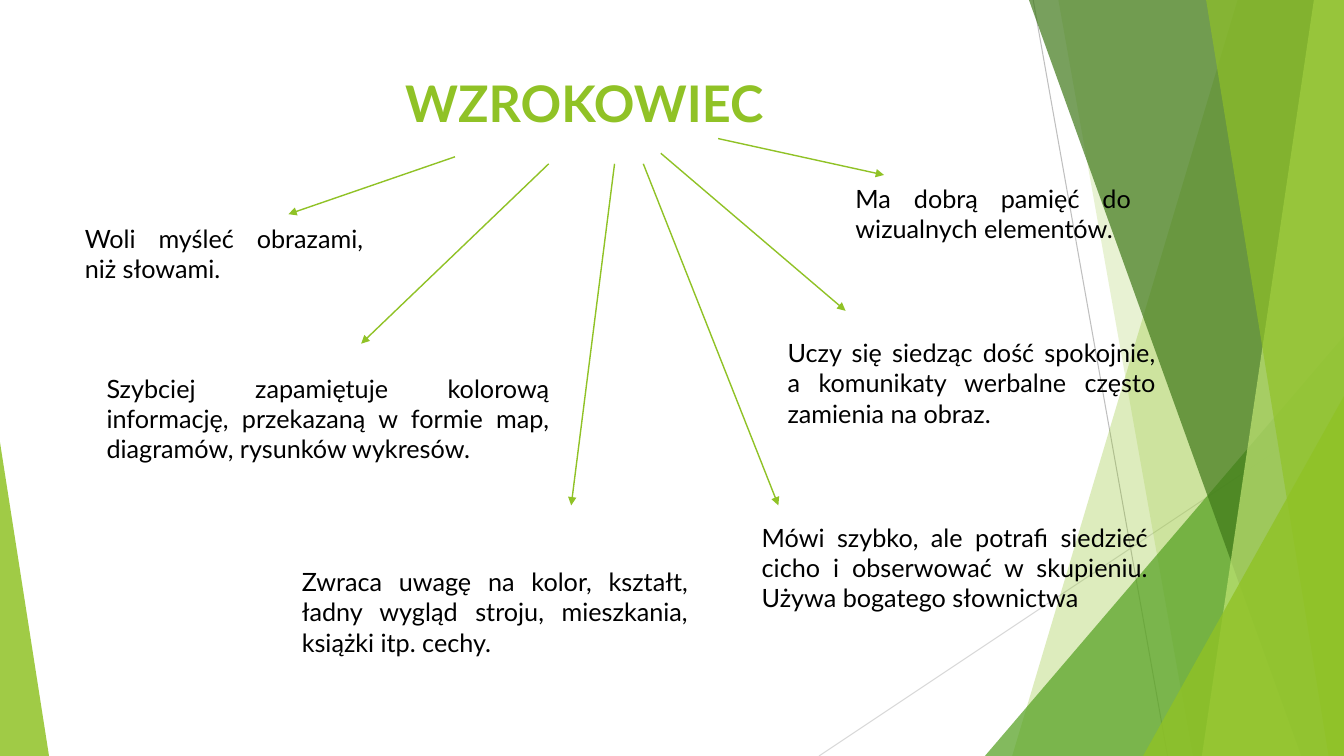
from lxml.etree import SubElement
from pptx import Presentation
from pptx.dml.color import RGBColor
from pptx.enum.shapes import MSO_CONNECTOR, MSO_SHAPE
from pptx.enum.text import MSO_ANCHOR, MSO_AUTO_SIZE, PP_ALIGN
from pptx.oxml.ns import qn
from pptx.util import Pt

GREEN = RGBColor(0x90, 0xC2, 0x26)
MID_GREEN = RGBColor(0x54, 0xA0, 0x21)
DARK_GREEN = RGBColor(0x3F, 0x78, 0x19)
PALE_GREEN = RGBColor(0xC0, 0xE4, 0x74)
GREY = RGBColor(0xBF, 0xBF, 0xBF)
LIGHT_GREY = RGBColor(0xD9, 0xD9, 0xD9)
BLACK = RGBColor(0, 0, 0)
FONT = "Lato"
WIDTH, HEIGHT = 960, 540

FACETS = [
    ("band", 76, 237, GREEN, 30),
    ("band", 204, 108, GREEN, 20),
    ("wedge", 256.5, 300, MID_GREEN, 72),
    ("band", 225, 30.5, DARK_GREEN, 70),
    ("band", 21.5, 101.5, PALE_GREEN, 70),
    ("band", 98.5, 11, GREEN, 65),
    ("wedge", 143.5, 257, GREEN, 80),
]

IDEAS = [
    ("Woli myśleć obrazami, niż słowami.",
     (53.5, 156, 213, 51), (325, 112), (206, 153)),
    ("Szybciej zapamiętuje kolorową informację, przekazaną w formie map, "
     "diagramów, rysunków wykresów.",
     (69, 263, 330.5, 73), (392, 117), (258, 245.5)),
    ("Zwraca uwagę na kolor, kształt, ładny wygląd stroju, mieszkania, "
     "książki itp. cechy.",
     (208.5, 401, 290, 73), (439, 117), (408, 361)),
    ("Mówi szybko, ale potrafi siedzieć cicho i obserwować w skupieniu. "
     "Używa bogatego słownictwa",
     (537, 369.5, 290, 73), (459.5, 117), (556, 361)),
    ("Uczy się siedząc dość spokojnie, a komunikaty werbalne często "
     "zamienia na obraz.",
     (555.5, 237.5, 277, 73), (472, 109.5), (604, 222)),
    ("Ma dobrą pamięć do wizualnych elementów.",
     (604, 127.5, 211, 51), (513, 99), (631.5, 125)),
]


def add_line(slide, start, end, color, weight):
    """Draw a straight line without a shadow and return it."""
    line = slide.shapes.add_connector(
        MSO_CONNECTOR.STRAIGHT, *map(Pt, start + end))
    line.line.color.rgb = color
    line.line.width = Pt(weight)
    SubElement(line._element.spPr, qn("a:effectLst"))
    return line


def paint(shape, color, opacity):
    """Give a shape a translucent fill and no outline or shadow."""
    shape.shadow.inherit = False
    shape.line.fill.background()
    shape.fill.solid()
    shape.fill.fore_color.rgb = color
    color_element = shape._element.spPr.find(".//" + qn("a:srgbClr"))
    SubElement(color_element, qn("a:alpha"), val=str(opacity * 1000))


def add_wedge(slide, box, apex, color, opacity):
    """Fill a box with a triangle whose apex is at the given fraction."""
    wedge = slide.shapes.add_shape(MSO_SHAPE.ISOSCELES_TRIANGLE, *map(Pt, box))
    wedge.adjustments[0] = apex
    paint(wedge, color, opacity)


def add_band(slide, box, top_inset, bottom_inset, color, opacity):
    """Fill the right edge of a box from a slanted left side."""
    left, top, width, height = box
    right, bottom = left + width, top + height
    builder = slide.shapes.build_freeform(
        Pt(right - top_inset), Pt(top), scale=1.0)
    corners = [(right, top), (right, bottom), (right - bottom_inset, bottom)]
    builder.add_line_segments([(Pt(x), Pt(y)) for x, y in corners], close=True)
    paint(builder.convert_to_shape(), color, opacity)


def add_backdrop(slide, box):
    """Place the thin lines and green facets along the sides of a box."""
    left, top, width, height = box
    right, bottom = left + width, top + height
    add_line(slide, (right - 222, top), (right - 126, bottom), GREY, 0.75)
    add_line(slide, (right, bottom - 250), (right - 375, bottom),
             LIGHT_GREY, 0.75)
    for kind, first, second, color, opacity in FACETS:
        if kind == "band":
            add_band(slide, box, first, second, color, opacity)
        else:
            wedge_box = (right - first, bottom - second, first, second)
            add_wedge(slide, wedge_box, 1, color, opacity)
    add_wedge(slide, (left, bottom - 224, 35, 224), 0, GREEN, 85)


def add_title(slide, box, text):
    """Set the title in its box, centred a little to the right."""
    title = slide.shapes.title
    title.left, title.top, title.width, title.height = map(Pt, box)
    frame = title.text_frame
    frame.text = text
    frame.auto_size = MSO_AUTO_SIZE.NONE
    frame.vertical_anchor = MSO_ANCHOR.TOP
    frame.margin_left = Pt(59)
    format_paragraph(frame.paragraphs[0], 36, GREEN, PP_ALIGN.CENTER, True)


def format_paragraph(paragraph, size, color, alignment, bold=False):
    """Set the font and alignment of a paragraph."""
    paragraph.alignment = alignment
    paragraph.font.name = FONT
    paragraph.font.size = Pt(size)
    paragraph.font.bold = bold
    paragraph.font.color.rgb = color


def add_idea(slide, box, text, start, end):
    """Write one trait in its box and draw the arrow that leads to it."""
    frame = slide.shapes.add_textbox(*map(Pt, box)).text_frame
    frame.word_wrap = True
    frame.text = text
    format_paragraph(frame.paragraphs[0], 18, BLACK, PP_ALIGN.JUSTIFY)
    arrow = add_line(slide, start, end, GREEN, 1)
    SubElement(arrow.line._get_or_add_ln(), qn("a:tailEnd"), type="triangle")


def main():
    """Build and save the slide."""
    presentation = Presentation()
    presentation.slide_width, presentation.slide_height = Pt(WIDTH), Pt(HEIGHT)
    slide = presentation.slides.add_slide(presentation.slide_layouts[5])
    add_backdrop(slide, (0, 0, WIDTH, HEIGHT))
    add_title(slide, (53, 48, 677, 70), "WZROKOWIEC")
    for text, box, start, end in IDEAS:
        add_idea(slide, box, text, start, end)
    presentation.save("out.pptx")


if __name__ == "__main__":
    main()
